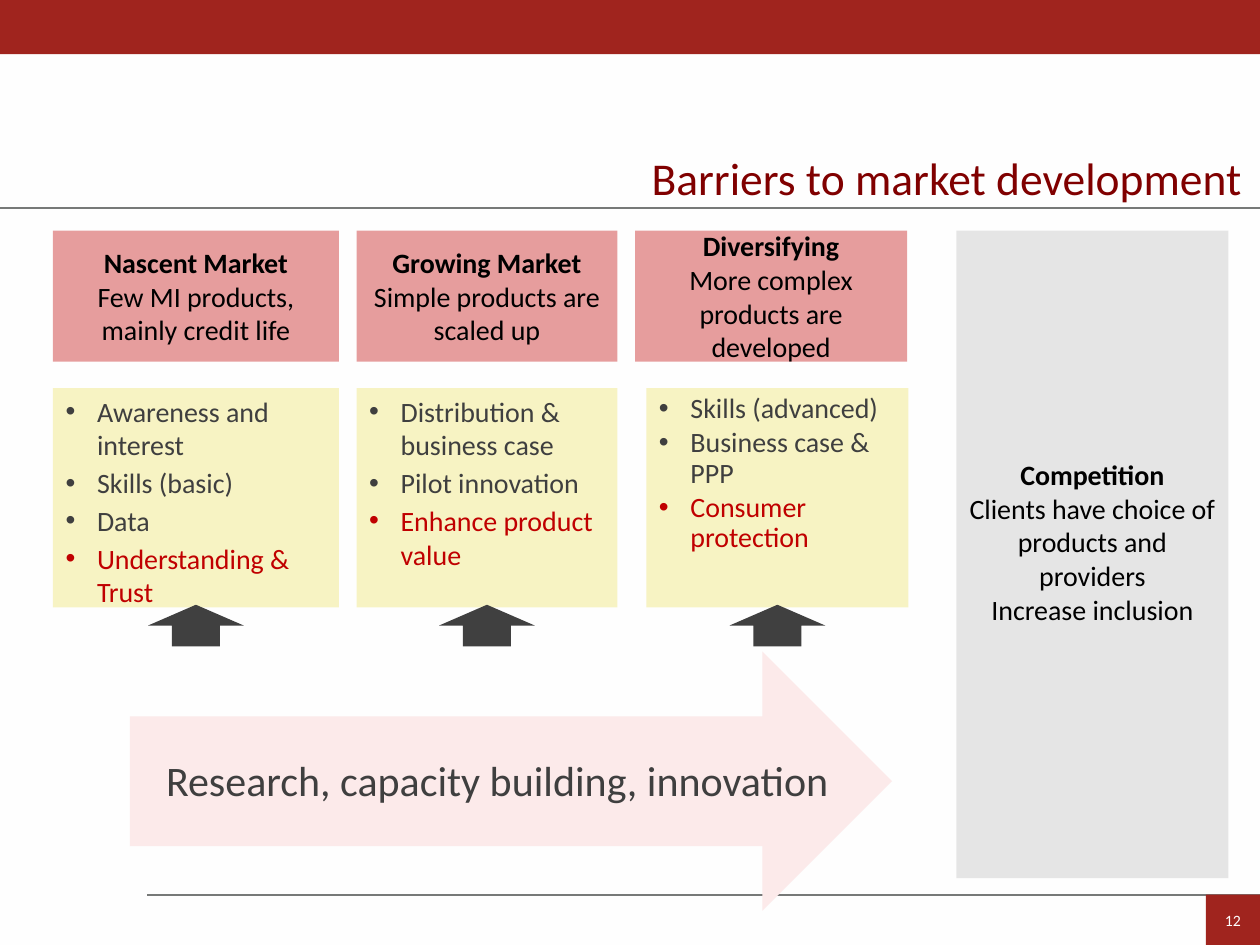
from dataclasses import dataclass
from lxml.etree import SubElement
from pptx import Presentation
from pptx.dml.color import RGBColor
from pptx.enum.shapes import MSO_CONNECTOR, MSO_SHAPE as Preset
from pptx.enum.text import MSO_ANCHOR as Anchor, MSO_AUTO_SIZE as AutoSize, PP_ALIGN as Align
from pptx.oxml.ns import qn
from pptx.util import Inches, Pt

COLS, ROWS = 100, 75


def color(hex_code):
    """Turn a hex string into a colour."""
    return RGBColor.from_string(hex_code)


@dataclass
class MarketSlide:
    """Hold the style and the current slide, and draw on a 100 by 75 grid."""
    deck: object
    slide: object
    font: str = "Calibri"
    ink: str = "3F3F3F"
    accent: str = "C00000"
    brand: str = "A0241E"
    rule_color: str = "777978"
    paper: str = "FEFEFE"

    def grid(self, *cells):
        """Convert alternating column and row counts to lengths."""
        units = self.deck.slide_width / COLS, self.deck.slide_height / ROWS
        return [round(cell * units[i % 2]) for i, cell in enumerate(cells)]

    def move(self, holder, *cells):
        """Put a placeholder at a grid position."""
        holder.left, holder.top, holder.width, holder.height = self.grid(*cells)

    def style(self, paragraph, size, ink, bold=False, align=Align.LEFT):
        """Format a paragraph and its runs."""
        paragraph.alignment = align
        for run in paragraph.runs:
            run.font.name, run.font.size, run.font.bold = self.font, Pt(size), bold
            run.font.color.rgb = color(ink)

    def title(self, wording, *cells):
        """Fill the title placeholder."""
        heading = self.slide.shapes.title
        self.move(heading, *cells)
        frame = heading.text_frame
        frame.text = wording
        frame.auto_size, frame.vertical_anchor = AutoSize.NONE, Anchor.MIDDLE
        frame.margin_right = Inches(0.18)
        self.style(frame.paragraphs[0], 26, "800000", align=Align.RIGHT)

    def rule(self, start, row):
        """Draw a horizontal line to the right edge."""
        line = self.slide.shapes.add_connector(
            MSO_CONNECTOR.STRAIGHT, *self.grid(start, row, COLS, row))
        line.line.color.rgb, line.line.width = color(self.rule_color), Pt(1.25)
        SubElement(line._element.spPr, qn("a:effectLst"))

    def block(self, preset, fill, *cells, alpha=None):
        """Draw a filled preset shape without outline."""
        block = self.slide.shapes.add_shape(preset, *self.grid(*cells))
        block.shadow.inherit = False
        block.fill.solid()
        block.fill.fore_color.rgb = color(fill)
        block.line.fill.background()
        if alpha:
            tint = block._element.spPr.find(".//" + qn("a:srgbClr"))
            SubElement(tint, qn("a:alpha"), val=str(alpha * 1000))
        return block

    def stage(self, fill, lines, *cells):
        """Draw a translucent card with a bold first line."""
        frame = self.block(Preset.RECTANGLE, fill, *cells, alpha=38).text_frame
        frame.text = "\n".join(lines)
        frame.vertical_anchor = Anchor.MIDDLE
        for i, paragraph in enumerate(frame.paragraphs):
            self.style(paragraph, 16, "000000", i == 0, Align.CENTER)
        return frame

    def barriers(self, holder, items, spacing, *cells):
        """Fill a body placeholder with bullets, the last one accented."""
        self.move(holder, *cells)
        holder.fill.solid()
        holder.fill.fore_color.rgb = color("F7F3C3")
        frame = holder.text_frame
        frame.text = "\n".join(items)
        frame.auto_size, frame.vertical_anchor = AutoSize.NONE, Anchor.TOP
        for paragraph, item in zip(frame.paragraphs, items):
            props = paragraph._p.get_or_add_pPr()
            props.set("marL", str(Inches(0.25)))
            props.set("indent", str(-Inches(0.25)))
            SubElement(props, qn("a:buFont"), typeface="Arial")
            SubElement(props, qn("a:buChar"), char="•")
            paragraph.line_spacing = spacing
            paragraph.space_before, paragraph.space_after = Pt(0), Pt(2.4)
            self.style(paragraph, 16, self.accent if item == items[-1] else self.ink)

    def label(self, wording, size, *cells):
        """Add a text box."""
        frame = self.slide.shapes.add_textbox(*self.grid(*cells)).text_frame
        frame.word_wrap = True
        frame.text = wording
        self.style(frame.paragraphs[0], size, self.ink)

    def page_number(self, number, *cells):
        """Draw the page number on its square."""
        frame = self.block(Preset.RECTANGLE, self.brand, *cells).text_frame
        frame.text = number
        frame.vertical_anchor = Anchor.MIDDLE
        self.style(frame.paragraphs[0], 9, self.paper, align=Align.CENTER)


STAGES = [
    (("Nascent Market", "Few MI products, mainly credit life"), (4.2, 22.7),
     ("Awareness and interest", "Skills (basic)", "Data", "Understanding & Trust"),
     (4.2, 22.7), 1.0),
    (("Growing Market", "Simple products are scaled up"), (28.3, 20.7),
     ("Distribution & business case", "Pilot innovation", "Enhance product value"),
     (28.3, 20.7), 1.0),
    (("Diversifying", "More complex products are developed"), (50.4, 21.6),
     ("Skills (advanced)", "Business case & PPP", "Consumer protection"),
     (51.3, 20.8), 0.9),
]


def main():
    """Build and save the slide."""
    deck = Presentation()
    deck.slide_width, deck.slide_height = Inches(10), Inches(7.5)
    market = MarketSlide(deck, deck.slides.add_slide(deck.slide_layouts[4]))
    backdrop = market.slide.background.fill
    backdrop.solid()
    backdrop.fore_color.rgb = color(market.paper)

    market.rule(11.7, 71)
    market.rule(0, 16.5)
    market.block(Preset.RECTANGLE, market.brand, 0, 0, COLS, 4.3)
    market.page_number("12", 95.7, 71, 4.3, 4)
    market.title("Barriers to market development", 30.9, 11.4, 69.5, 5.4)

    *bodies, spare = list(market.slide.placeholders)[1:]
    spare._element.getparent().remove(spare._element)
    for body, (lines, (left, width), items, (start, span), spacing) in zip(bodies, STAGES):
        market.stage(market.accent, lines, left, 18.3, width, 10.4)
        market.barriers(body, items, spacing, start, 30.8, span, 17.4)
        market.block(Preset.UP_ARROW, "404040", start + span / 2 - 3.8, 48, 7.6, 3.3)

    outcome = market.stage("BEBEBE", (
        "Competition", "Clients have choice of products and providers",
        "Increase inclusion"), 75.9, 18.3, 21.6, 51.4)
    outcome.margin_bottom = Inches(0.25)
    market.block(Preset.RIGHT_ARROW, "FCEAEA", 10.3, 51.7, 60.5, 20.6)
    market.label("Research, capacity building, innovation", 24, 12.2, 59.4, 58.7, 5)
    deck.save("out.pptx")


if __name__ == "__main__":
    main()
